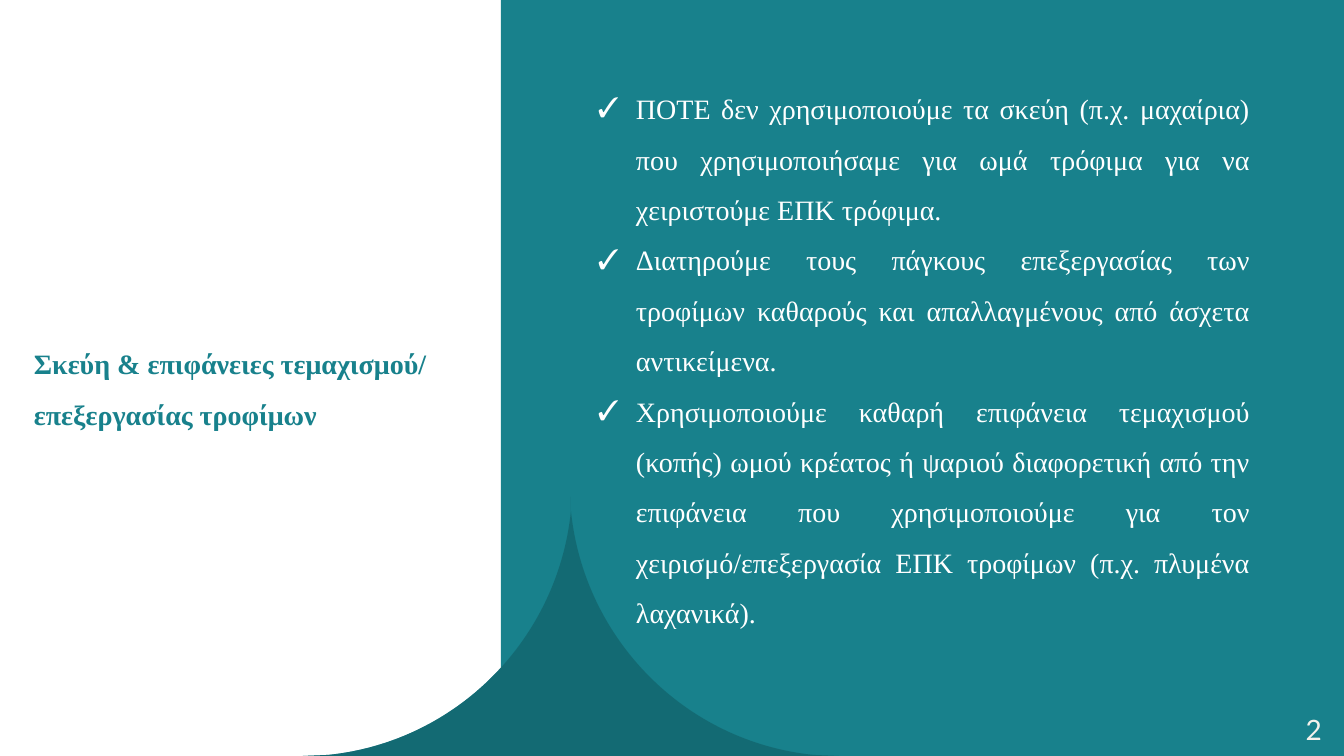
from dataclasses import dataclass

import pptx
import pptx.dml.color
import pptx.enum.shapes
import pptx.enum.text
import pptx.oxml
import pptx.oxml.ns
import pptx.util
from lxml import etree

HEADING = "Σκεύη & επιφάνειες τεμαχισμού/ επεξεργασίας τροφίμων"
RULES = [
    "ΠΟΤΕ δεν χρησιμοποιούμε τα σκεύη (π.χ. μαχαίρια) που χρησιμοποιήσαμε "
    "για ωμά τρόφιμα για να χειριστούμε ΕΠΚ τρόφιμα.",
    "Διατηρούμε τους πάγκους επεξεργασίας των τροφίμων καθαρούς και "
    "απαλλαγμένους από άσχετα αντικείμενα.",
    "Χρησιμοποιούμε καθαρή επιφάνεια τεμαχισμού (κοπής) ωμού κρέατος ή ψαριού "
    "διαφορετική από την επιφάνεια που χρησιμοποιούμε για τον "
    "χειρισμό/επεξεργασία ΕΠΚ τροφίμων (π.χ. πλυμένα λαχανικά).",
]
PAGE_NUMBER = "2"

# Lengths in px
SLIDE_WIDTH, SLIDE_HEIGHT = 1344, 756
PANEL_LEFT = 501
HEADING_BOX = (24, 325, 497, 106)
RULES_BOX = (588, 70, 672, 570)
NUMBER_BOX = (1255, 709, 77, 40)
BULLET_INDENT = 38
SPIRE_AXIS = 571
# Foot, four control points of the curved side, tip
SPIRE_SIDE = [(303, 756), (328, 755), (457, 742), (558, 639), (571, 511), (571, 497)]
CURVE_STARTS = (1, 6)  # outline points where the two curved sides begin


@dataclass(frozen=True)
class Theme:
    white: str = "FFFFFF"
    teal: str = "18818C"
    dark_teal: str = "126169"
    cream: str = "F4F2EC"
    body_font: str = "Times New Roman"
    number_font: str = "Lato"
    text_size: int = 20


THEME = Theme()
ALIGN = pptx.enum.text.PP_ALIGN
ANCHOR = pptx.enum.text.MSO_ANCHOR
AUTO_SIZE = pptx.enum.text.MSO_AUTO_SIZE
qn = pptx.oxml.ns.qn


def px(length):
    return pptx.util.Emu(round(length * 9144000 / 1008))


def rgb(color):
    return pptx.dml.color.RGBColor.from_string(color)


def paint(shape, color, opacity=100):
    """Give a shape a flat fill, with no line or shadow."""
    shape.shadow.inherit = False
    shape.line.fill.background()
    shape.fill.solid()
    shape.fill.fore_color.rgb = rgb(color)
    if opacity < 100:
        color_element = shape._element.spPr.find(".//" + qn("a:srgbClr"))
        alpha = etree.SubElement(color_element, qn("a:alpha"))
        alpha.set("val", str(opacity * 1000))


def add_rectangle(slide, box, color):
    kind = pptx.enum.shapes.MSO_SHAPE.RECTANGLE
    paint(slide.shapes.add_shape(kind, *map(px, box)), color)


def bend(shape, curve_starts):
    """Turn the three segments after each given outline point into one cubic curve."""
    segments = list(shape._element.iter(qn("a:lnTo")))
    for start in curve_starts:
        first, *others = segments[start:start + 3]
        first.tag = qn("a:cubicBezTo")
        for segment in others:
            first.append(segment[0])
            segment.getparent().remove(segment)


def add_spire(slide, color, opacity=100):
    mirrored = [(2 * SPIRE_AXIS - x, y) for x, y in reversed(SPIRE_SIDE[:-1])]
    outline = [(px(x), px(y)) for x, y in SPIRE_SIDE + mirrored]
    builder = slide.shapes.build_freeform(*outline[0])
    builder.add_line_segments(outline[1:], close=True)
    spire = builder.convert_to_shape()
    bend(spire, CURVE_STARTS)
    paint(spire, color, opacity)


def add_bullet(paragraph, symbol, font):
    properties = paragraph._p.get_or_add_pPr()
    properties.set("marL", str(px(BULLET_INDENT)))
    properties.set("indent", str(-px(BULLET_INDENT)))
    etree.SubElement(properties, qn("a:buFont")).set("typeface", font)
    etree.SubElement(properties, qn("a:buChar")).set("char", symbol)


def add_text(slide, box, texts, *, color, font=THEME.body_font, bold=False,
             align=ALIGN.LEFT, anchor=ANCHOR.TOP, spacing=1.0, bullet=None,
             auto_size=AUTO_SIZE.NONE):
    frame = slide.shapes.add_textbox(*map(px, box)).text_frame
    frame.word_wrap = True
    frame.auto_size = auto_size
    frame.vertical_anchor = anchor
    for index, text in enumerate(texts):
        paragraph = frame.add_paragraph() if index else frame.paragraphs[0]
        paragraph.alignment = align
        paragraph.line_spacing = spacing
        if bullet:
            add_bullet(paragraph, bullet, font)
        run = paragraph.add_run()
        run.text = text
        run.font.name = font
        run.font.size = pptx.util.Pt(THEME.text_size)
        run.font.bold = bold
        run.font.color.rgb = rgb(color)


def main():
    presentation = pptx.Presentation()
    presentation.slide_width = px(SLIDE_WIDTH)
    presentation.slide_height = px(SLIDE_HEIGHT)
    slide = presentation.slides.add_slide(presentation.slide_layouts[6])

    add_rectangle(slide, (0, 0, SLIDE_WIDTH, SLIDE_HEIGHT), THEME.white)
    panel = (PANEL_LEFT, 0, SLIDE_WIDTH - PANEL_LEFT, SLIDE_HEIGHT)
    add_rectangle(slide, panel, THEME.teal)
    add_spire(slide, THEME.teal)
    add_spire(slide, THEME.dark_teal, opacity=70)

    add_text(slide, NUMBER_BOX, [PAGE_NUMBER], color=THEME.cream,
             font=THEME.number_font, align=ALIGN.RIGHT, anchor=ANCHOR.MIDDLE)
    add_text(slide, HEADING_BOX, [HEADING], color=THEME.teal, bold=True,
             spacing=1.5, auto_size=AUTO_SIZE.SHAPE_TO_FIT_TEXT)
    add_text(slide, RULES_BOX, RULES, color=THEME.white, align=ALIGN.JUSTIFY,
             spacing=1.5, bullet="✓", auto_size=AUTO_SIZE.SHAPE_TO_FIT_TEXT)
    presentation.save("out.pptx")


if __name__ == "__main__":
    main()
